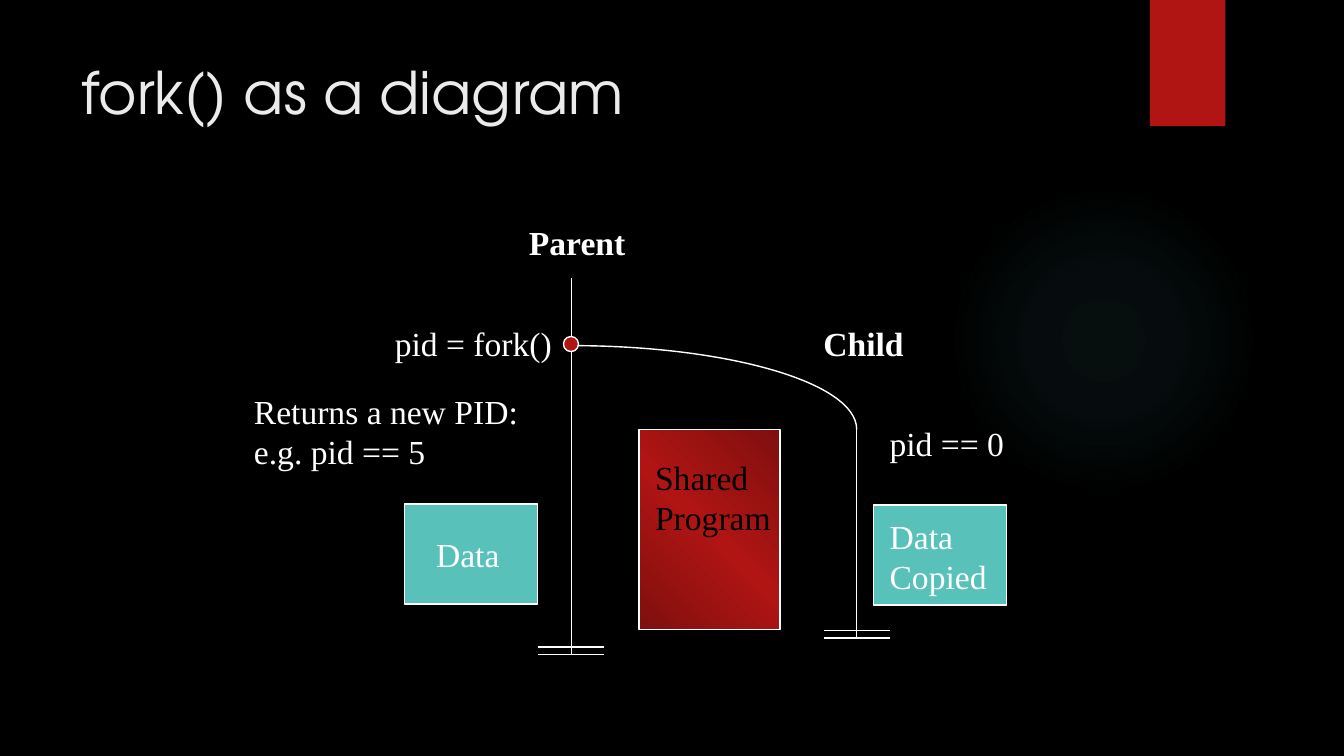
import dataclasses
import typing

import lxml.etree
import pptx
import pptx.dml.color
import pptx.enum.shapes
import pptx.enum.text
import pptx.oxml
import pptx.oxml.ns
import pptx.util

Cm = pptx.util.Cm
Shapes = pptx.enum.shapes.MSO_SHAPE
WHITE = "FFFFFF"
BLACK = "000000"
RED = "B01513"
DARK_RED = "7E0F0E"
TEAL = "58C1BA"
GLOW = "50B9C1"
SERIF = "Times New Roman"


@dataclasses.dataclass
class Block:
    left: float
    top: float
    width: float
    height: float
    fill: typing.Optional[str] = None
    outlined: bool = True
    preset: Shapes = Shapes.RECTANGLE


@dataclasses.dataclass
class Label:
    left: float
    top: float
    width: float
    height: float
    lines: list[str]
    size: int = 24
    font: str = SERIF
    color: str = WHITE
    bold: bool = False
    wrap: bool = False
    fill: typing.Optional[str] = None


@dataclasses.dataclass
class Timeline:
    x: float
    start: float
    end: float


def rgb(color: str) -> pptx.dml.color.RGBColor:
    return pptx.dml.color.RGBColor.from_string(color)


def paint(fill, color: str) -> None:
    fill.solid()
    fill.fore_color.rgb = rgb(color)


def outline(line) -> None:
    paint(line.fill, WHITE)
    line.width = pptx.util.Pt(1)


def draw_block(slide, block: Block):
    shape = slide.shapes.add_shape(
        block.preset, Cm(block.left), Cm(block.top), Cm(block.width), Cm(block.height)
    )
    shape.shadow.inherit = False
    if block.fill:
        paint(shape.fill, block.fill)
    if block.outlined:
        outline(shape.line)
    else:
        shape.line.fill.background()
    return shape


def set_gradient(shape, stops: list[tuple[int, str, int]], shading: str) -> None:
    marks = "".join(
        f'<a:gs pos="{position * 1000}"><a:srgbClr val="{color}">'
        f'<a:alpha val="{opacity * 1000}"/></a:srgbClr></a:gs>'
        for position, color, opacity in stops
    )
    gradient = pptx.oxml.parse_xml(
        f'<a:gradFill {pptx.oxml.ns.nsdecls("a")} rotWithShape="1">'
        f"<a:gsLst>{marks}</a:gsLst>{shading}</a:gradFill>"
    )
    geometry = shape._element.spPr.find(pptx.oxml.ns.qn("a:prstGeom"))
    geometry.addnext(gradient)


def draw_label(slide, label: Label) -> None:
    box = slide.shapes.add_textbox(
        Cm(label.left), Cm(label.top), Cm(label.width), Cm(label.height)
    )
    if label.fill:
        paint(box.fill, label.fill)
    frame = box.text_frame
    frame.word_wrap = label.wrap
    frame.vertical_anchor = pptx.enum.text.MSO_ANCHOR.TOP
    paragraph = frame.paragraphs[0]
    for index, line in enumerate(label.lines):
        if index:
            paragraph.add_line_break()
        run = paragraph.add_run()
        run.text = line
        run.font.size = pptx.util.Pt(label.size)
        run.font.name = label.font
        run.font.bold = label.bold
        run.font.color.rgb = rgb(label.color)


def draw_line(slide, x1: float, y1: float, x2: float, y2: float) -> None:
    connector = slide.shapes.add_connector(
        pptx.enum.shapes.MSO_CONNECTOR.STRAIGHT, Cm(x1), Cm(y1), Cm(x2), Cm(y2)
    )
    outline(connector.line)
    lxml.etree.SubElement(
        connector._element.spPr, pptx.oxml.ns.qn("a:effectLst")
    )


def draw_timeline(slide, timeline: Timeline) -> None:
    draw_line(slide, timeline.x, timeline.start, timeline.x, timeline.end)
    for y in (timeline.end, timeline.end - 0.2):
        draw_line(slide, timeline.x - 0.83, y, timeline.x + 0.83, y)


def draw_curve(slide, start: tuple[float, float], bends: list[tuple[float, float]]) -> None:
    builder = slide.shapes.build_freeform(Cm(start[0]), Cm(start[1]))
    builder.add_line_segments([(Cm(x), Cm(y)) for x, y in bends], close=False)
    shape = builder.convert_to_shape()
    shape.shadow.inherit = False
    shape.fill.background()
    outline(shape.line)
    segments = list(shape._element.iter(pptx.oxml.ns.qn("a:lnTo")))
    curve = lxml.etree.SubElement(
        segments[0].getparent(), pptx.oxml.ns.qn("a:cubicBezTo")
    )
    for segment in segments:
        curve.append(segment[0])
        segment.getparent().remove(segment)


PARENT = Timeline(14.4, 7.01, 16.5)
CHILD = Timeline(21.59, 10.82, 16.08)
FORK_Y = 8.71

BLOCKS = [
    Block(28.98, 0, 1.9, 3.18, RED, outlined=False),
    Block(10.19, 12.7, 3.35, 2.52, TEAL),
    Block(22.02, 12.73, 3.35, 2.52, TEAL),
]

LABELS = [
    Label(1.8, 1.27, 26.14, 3.89, ["fork() as a diagram"], 42,
          "TeX Gyre Adventor", "EBEBEB", wrap=True),
    Label(13.08, 5.46, 2.95, 1.27, ["Parent"], bold=True),
    Label(9.7, 8, 4.5, 1.27, ["pid = fork()"]),
    Label(6.15, 9.73, 7.57, 3.33, ["Returns a new PID: e.g. pid == 5"], wrap=True),
    Label(10.74, 13.34, 2.11, 1.27, ["Data"]),
    Label(16.26, 11.38, 3.45, 2.31, ["Shared", "Program"], color=BLACK),
    Label(22.17, 12.88, 2.97, 2.31, ["Data", "Copied"], fill=TEAL),
    Label(20.5, 8, 2.54, 1.27, ["Child"], bold=True),
    Label(22.17, 10.54, 3.4, 1.27, ["pid == 0"]),
]


def main() -> None:
    deck = pptx.Presentation()
    deck.slide_width, deck.slide_height = Cm(33.87), Cm(19.05)
    slide = deck.slides.add_slide(deck.slide_layouts[6])
    paint(slide.background.fill, BLACK)

    glow = draw_block(
        slide, Block(23.9, 4.65, 7.82, 7.82, outlined=False, preset=Shapes.OVAL)
    )
    set_gradient(
        glow,
        [(0, GLOW, 7), (36, GLOW, 6), (69, GLOW, 0)],
        '<a:path path="circle"><a:fillToRect l="50000" t="50000" r="50000" b="50000"/></a:path>',
    )
    shared_program = draw_block(slide, Block(16.1, 10.82, 3.56, 5.05))
    set_gradient(
        shared_program,
        [(0, DARK_RED, 100), (50, RED, 100), (100, DARK_RED, 100)],
        '<a:lin ang="18900000" scaled="1"/>',
    )
    for block in BLOCKS:
        draw_block(slide, block)
    for label in LABELS:
        draw_label(slide, label)

    draw_timeline(slide, PARENT)
    draw_curve(
        slide,
        (PARENT.x, FORK_Y),
        [(18.36, FORK_Y), (CHILD.x, 9.65), (CHILD.x, CHILD.start)],
    )
    draw_timeline(slide, CHILD)
    draw_block(slide, Block(14.2, 8.48, 0.38, 0.38, RED, preset=Shapes.OVAL))
    deck.save("out.pptx")


if __name__ == "__main__":
    main()
